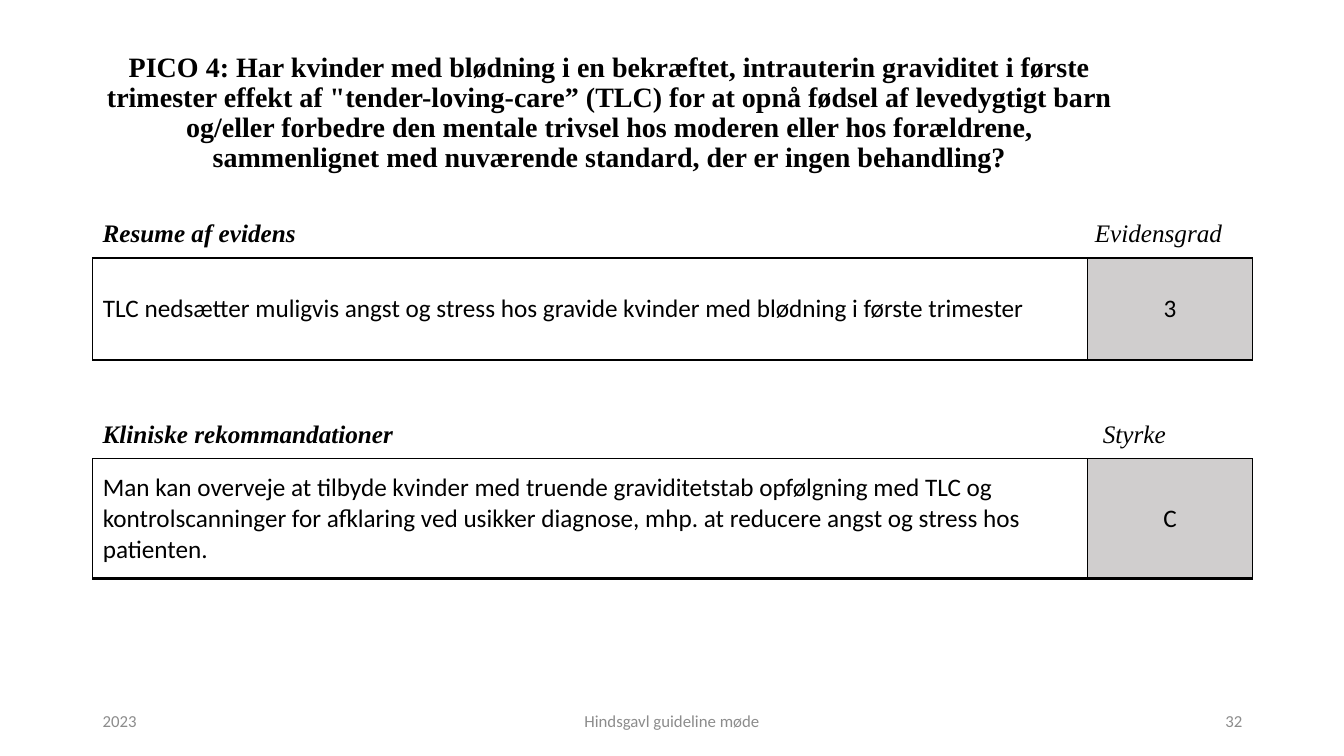
import pptx
import pptx.util
import pptx.dml.color
import pptx.enum.text
import pptx.oxml
import pptx.oxml.ns
from lxml import etree

W, H = 13.33, 7.5
LEFT, WIDTH = 0.92, 11.5          # content area
GRADE_W = 1.63                    # grade column
TEXT_W = WIDTH - GRADE_W
LABEL_H = 0.4
COLORS = {"ink": "000000", "muted": "8C8C8C", "grade": "D0CECE", "paper": "FFFFFF"}
SERIF, SANS = "Times New Roman", "Calibri"
ALIGN = pptx.enum.text.PP_ALIGN
MIDDLE = pptx.enum.text.MSO_ANCHOR.MIDDLE
TOP = pptx.enum.text.MSO_ANCHOR.TOP
inch = pptx.util.Inches


def rgb(name):
    return pptx.dml.color.RGBColor.from_string(COLORS[name])


def write(tf, text, size, font, color="ink", align=ALIGN.LEFT, bold=False, italic=False):
    p = tf.paragraphs[0]
    p.text = text
    p.alignment = align
    f = p.font
    f.size, f.name, f.bold, f.italic = pptx.util.Pt(size), font, bold, italic
    f.color.rgb = rgb(color)
    return p


def add_text(s, box, text, size, font, anchor=TOP, **style):
    tf = s.shapes.add_textbox(*map(inch, box)).text_frame
    tf.word_wrap = True
    tf.vertical_anchor = anchor
    return write(tf, text, size, font, **style)


def set_borders(cell):
    tcPr = cell._tc.get_or_add_tcPr()
    sides = {"lnL": 1, "lnR": 1, "lnT": 1, "lnB": 2}
    for i, (tag, width) in enumerate(sides.items()):
        ln = etree.Element(pptx.oxml.ns.qn("a:" + tag), w=str(pptx.util.Pt(width)))
        fill = etree.SubElement(ln, pptx.oxml.ns.qn("a:solidFill"))
        etree.SubElement(fill, pptx.oxml.ns.qn("a:srgbClr"), val=COLORS["ink"])
        tcPr.insert(i, ln)


def add_grade_table(s, top, height, statement, grade):
    frame = s.shapes.add_table(1, 2, *map(inch, (LEFT, top, WIDTH, height)))
    table = frame.table
    table.first_row = table.horz_banding = False
    columns = [(TEXT_W, statement, "paper", ALIGN.LEFT),
               (GRADE_W, grade, "grade", ALIGN.CENTER)]
    for i, (width, text, fill, align) in enumerate(columns):
        table.columns[i].width = inch(width)
        cell = table.cell(0, i)
        cell.vertical_anchor = MIDDLE
        cell.fill.solid()
        cell.fill.fore_color.rgb = rgb(fill)
        write(cell.text_frame, text, 18, SANS, align=align)
        set_borders(cell)


def add_section(s, top, height, heading, grade_label, label_left, statement, grade):
    label_top = top - 0.45
    add_text(s, (LEFT, label_top, 4, LABEL_H), heading, 18, SERIF, bold=True, italic=True)
    add_text(s, (label_left, label_top, 1.65, LABEL_H), grade_label, 18, SERIF, italic=True)
    add_grade_table(s, top, height, statement, grade)


def add_footer(s):
    right = LEFT + WIDTH
    parts = [(LEFT, 3, "2023", ALIGN.LEFT),
             ((W - 4.5) / 2, 4.5, "Hindsgavl guideline møde", ALIGN.CENTER),
             (right - 3, 3, "32", ALIGN.RIGHT)]
    for left, width, text, align in parts:
        add_text(s, (left, 6.95, width, 0.4), text, 12, SANS, MIDDLE,
                 color="muted", align=align)


def main():
    prs = pptx.Presentation()
    prs.slide_width, prs.slide_height = inch(W), inch(H)
    s = prs.slides.add_slide(prs.slide_layouts[6])

    # Title
    p = add_text(
        s, (LEFT, 0.4, 10.25, 1.45),
        'PICO 4: Har kvinder med blødning i en bekræftet, intrauterin graviditet i første '
        'trimester effekt af "tender-loving-care” (TLC) for at opnå fødsel af levedygtigt barn '
        'og/eller forbedre den mentale trivsel hos moderen eller hos forældrene, '
        'sammenlignet med nuværende standard, der er ingen behandling?',
        20, SERIF, MIDDLE, align=ALIGN.CENTER, bold=True)
    p.line_spacing = 0.9

    # Evidence and recommendations
    add_section(s, 2.56, 1.01, "Resume af evidens", "Evidensgrad", 10.76,
                "TLC nedsætter muligvis angst og stress hos gravide kvinder med blødning "
                "i første trimester", "3")
    add_section(s, 4.55, 1.19, "Kliniske rekommandationer", "Styrke", 10.84,
                "Man kan overveje at tilbyde kvinder med truende graviditetstab opfølgning "
                "med TLC og kontrolscanninger for afklaring ved usikker diagnose, mhp. at "
                "reducere angst og stress hos patienten.", "C")

    add_footer(s)
    prs.save("out.pptx")


if __name__ == "__main__":
    main()
